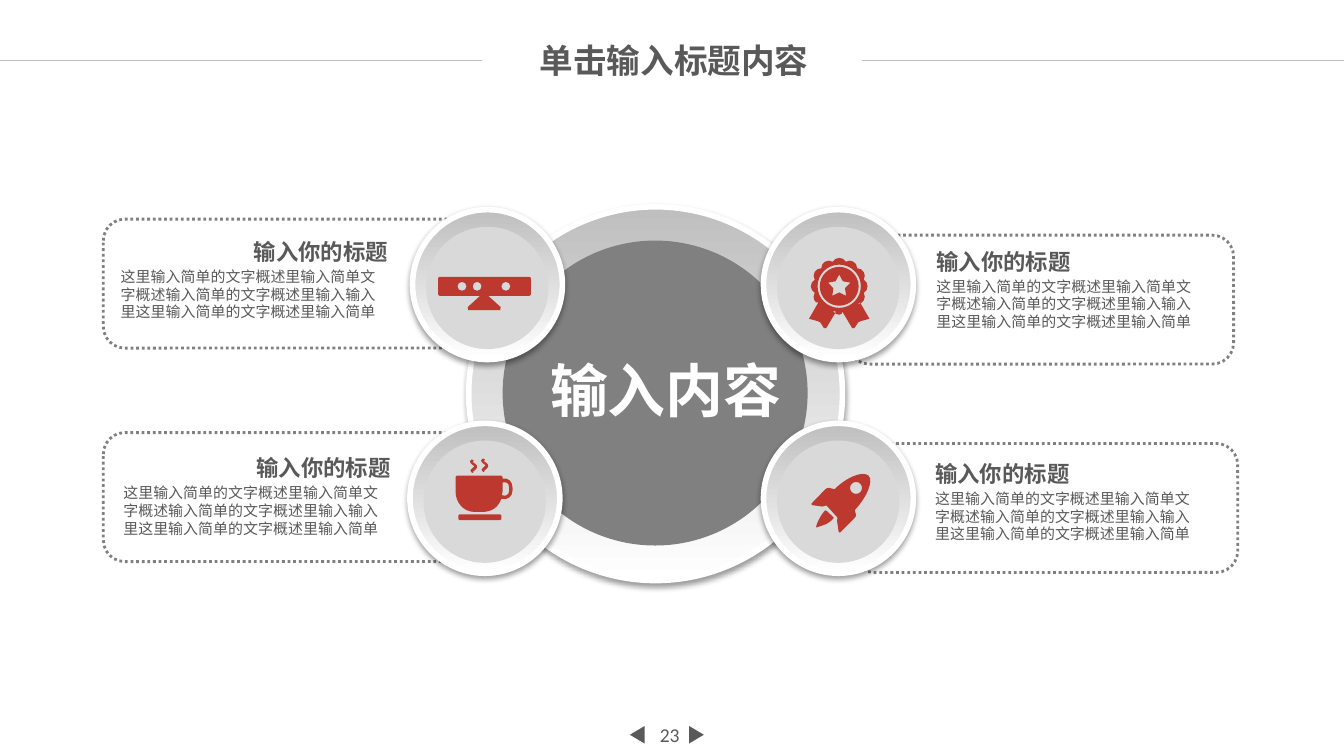
import math

from lxml import etree
from pptx import Presentation
from pptx.dml.color import RGBColor
from pptx.enum.dml import MSO_LINE
from pptx.enum.shapes import MSO_CONNECTOR, MSO_SHAPE
from pptx.enum.text import MSO_ANCHOR, PP_ALIGN
from pptx.oxml.ns import qn
from pptx.util import Pt

WHITE = RGBColor(0xFF, 0xFF, 0xFF)
LIGHT = RGBColor(0xD9, 0xD9, 0xD9)
SILVER = RGBColor(0xBF, 0xBF, 0xBF)
GRAY = RGBColor(0x80, 0x80, 0x80)
DARK = RGBColor(0x59, 0x59, 0x59)
RED = RGBColor(0xBD, 0x39, 0x2F)

OVAL, ROUNDED, TRIANGLE = MSO_SHAPE.OVAL, MSO_SHAPE.ROUNDED_RECTANGLE, MSO_SHAPE.ISOSCELES_TRIANGLE
LEFT, CENTER, RIGHT = PP_ALIGN.LEFT, PP_ALIGN.CENTER, PP_ALIGN.RIGHT
TOP, MIDDLE = MSO_ANCHOR.TOP, MSO_ANCHOR.MIDDLE
CJK = "Noto Sans CJK SC"

HEADING = "输入你的标题"
BODY = "这里输入简单的文字概述里输入简单文字概述输入简单的文字概述里输入输入里这里输入简单的文字概述里输入简单"

# Left and top of each panel, badge and caption, with the heading alignment
ITEMS = [
    ((454.3, 126), (409, 112.3), (494.6, 128.9), LEFT),
    ((456.5, 237.6), (409, 226.8), (493.9, 242.6), LEFT),
    ((55.4, 117.4), (221, 112.3), (57.6, 123.6), RIGHT),
    ((55.4, 231.8), (219.6, 226.8), (59, 239.6), RIGHT),
]


def add_shape(slide, kind, left, top, width, height, fill=None, rotation=0):
    shape = slide.shapes.add_shape(kind, Pt(left), Pt(top), Pt(width), Pt(height))
    shape.shadow.inherit = False
    shape.rotation = rotation
    shape.line.fill.background()
    if fill is None:
        shape.fill.background()
    else:
        shape.fill.solid()
        shape.fill.fore_color.rgb = fill
    return shape


def add_panel(slide, left, top):
    panel = add_shape(slide, ROUNDED, left, top, 206.6, 69.1)
    panel.line.color.rgb = GRAY
    panel.line.width = Pt(1.5)
    panel.line.dash_style = MSO_LINE.ROUND_DOT


def add_raised_circle(slide, left, top, size):
    circle = add_shape(slide, OVAL, left, top, size, size)
    circle.fill.gradient()
    circle.fill.gradient_angle = 90
    for stop, color in zip(circle.fill.gradient_stops, (WHITE, SILVER)):
        stop.color.rgb = color
    circle.line.color.rgb = WHITE
    circle.line.width = Pt(3)
    effects = circle._element.spPr.find(qn("a:effectLst"))
    shadow = etree.SubElement(effects, qn("a:outerShdw"), blurRad=str(Pt(3.1)),
                              dist=str(Pt(1.6)), dir="5400000", algn="t", rotWithShape="0")
    color = etree.SubElement(shadow, qn("a:srgbClr"), val="000000")
    etree.SubElement(color, qn("a:alpha"), val="38000")


def add_text(slide, box, paragraphs, anchor=MIDDLE, inset=(0, 0)):
    text_box = slide.shapes.add_textbox(*[Pt(length) for length in box])
    frame = text_box.text_frame
    frame.word_wrap = True
    frame.vertical_anchor = anchor
    frame.margin_left = frame.margin_right = Pt(inset[0])
    frame.margin_top = frame.margin_bottom = Pt(inset[1])
    for index, (text, style) in enumerate(paragraphs):
        paragraph = frame.paragraphs[0] if index == 0 else frame.add_paragraph()
        format_text(paragraph, text, **style)


def format_text(paragraph, text, size, color=DARK, bold=False, align=CENTER,
                font=CJK, line_height=None, before=0):
    paragraph.alignment = align
    paragraph.space_before = Pt(before)
    if line_height:
        paragraph.line_spacing = Pt(line_height)
    run = paragraph.add_run()
    run.text = text
    run.font.name = font
    run.font.size = Pt(size)
    run.font.bold = bold
    run.font.color.rgb = color
    etree.SubElement(run._r.rPr, qn("a:ea"), typeface=font)


def add_rule(slide, start, end, y):
    rule = slide.shapes.add_connector(MSO_CONNECTOR.STRAIGHT, Pt(start), Pt(y), Pt(end), Pt(y))
    rule.line.color.rgb = SILVER
    rule.line.width = Pt(0.75)
    etree.SubElement(rule._element.spPr, qn("a:effectLst"))


def polar(x, y, radius, degrees):
    """Point at an angle measured clockwise from the top."""
    angle = math.radians(degrees)
    return x + radius * math.sin(angle), y - radius * math.cos(angle)


def ring(x, y, r):
    k = 0.55 * r
    return [(x, y - r), (x + k, y - r, x + r, y - k, x + r, y),
            (x + r, y + k, x + k, y + r, x, y + r), (x - k, y + r, x - r, y + k, x - r, y),
            (x - r, y - k, x - k, y - r, x, y - r)]


def add_icon(slide, *outlines):
    """Draw outlines of nodes: pairs are corners, sixes are Bezier curves."""
    builder = slide.shapes.build_freeform(*[Pt(value) for value in outlines[0][0]])
    for index, outline in enumerate(outlines):
        if index:
            builder.move_to(*[Pt(value) for value in outline[0]])
        points = [node[i:i + 2] for node in outline[1:] for i in range(0, len(node), 2)]
        builder.add_line_segments([(Pt(x), Pt(y)) for x, y in points], close=True)
    icon = builder.convert_to_shape()
    icon.shadow.inherit = False
    icon.fill.solid()
    icon.fill.fore_color.rgb = RED
    icon.line.fill.background()

    # Join the three segments of each curve into one Bezier command
    segments = iter(list(icon._element.iter(qn("a:lnTo"))))
    for outline in outlines:
        for node in outline[1:]:
            first = next(segments)
            if len(node) == 6:
                curve = etree.Element(qn("a:cubicBezTo"))
                first.addprevious(curve)
                for segment in (first, next(segments), next(segments)):
                    curve.append(segment[0])
                    segment.getparent().remove(segment)
        # The builder may repeat the start only through its close command


def add_level(slide):
    bar = [(235.4, 148.3), (283.7, 148.3), (284.4, 149), (284.4, 157.8), (283.7, 158.5),
           (261.6, 158.5), (268.2, 164.5), (268, 166.2), (250.8, 166.2), (250.6, 164.5),
           (257.2, 158.5), (235.4, 158.5), (234.7, 157.8), (234.7, 149)]
    add_icon(slide, bar, *[ring(x, 153.4, 2.4) for x in (247.5, 255.6, 271)])


def add_rocket(slide):
    body = [(457.9, 273.3), (464.4, 266.4, 468, 257.8, 465.4, 254.9),
            (462.2, 252, 453.6, 255.6, 447.1, 262.1), (444.2, 261.4),
            (443.5, 261.2, 442.8, 261.6, 442.1, 262.2), (434.7, 269.8), (434.9, 270.6),
            (440.6, 271.4), (442.8, 270.8), (448.6, 277.2), (448.5, 279.4), (449.3, 285.1),
            (450, 285.3), (457.9, 277.4), (458.5, 276.7, 458.8, 276.3, 458.6, 275.8)]
    flame = [(442.7, 273.6), (441.9, 273.2, 441.9, 273.6, 441.7, 273.8),
             (439.2, 276.5, 436.3, 283, 437.5, 282.6),
             (442.8, 280.8, 443.5, 280.8, 446.4, 277.9), (446.6, 277.2)]
    add_icon(slide, flame)
    add_icon(slide, body, ring(458.6, 261.4, 3.2))


def add_medal(slide):
    x, y = 449.6, 153.4
    left_ribbon = [(447.9, 167), (442.6, 175.9), (441.4, 175.8), (439.4, 172.7),
                   (438, 172.1), (433.4, 170.8), (438.5, 162)]
    right_ribbon = [(2 * x - px, py) for px, py in reversed(left_ribbon)]
    rosette = [polar(x, y, 13.6, 15)]
    for start in range(15, 375, 30):
        if start == 135:
            rosette += right_ribbon
        elif start == 195:
            rosette += left_ribbon
        else:
            rosette.append((*polar(x, y, 16, start + 8), *polar(x, y, 16, start + 22),
                            *polar(x, y, 13.6, start + 30)))
    star = [polar(x, y, r, 36 * k) for k, r in enumerate([6.3, 3.3] * 5)]
    add_icon(slide, rosette, ring(x, y, 11.6))
    add_icon(slide, ring(x, y, 10.4), star)


def add_cup(slide):
    cup = [(244.8, 254.9), (268.6, 254.9), (269.3, 255.6), (269.3, 256.4),
           (272.5, 256, 274.6, 258, 274.6, 261.4), (274.6, 262.8),
           (274.6, 266, 272, 268.2, 268.6, 267.3), (267, 271.8, 263.5, 274.3, 258.5, 274.3),
           (254.2, 274.3), (248.4, 274.3, 244.1, 269.3, 244.1, 263.5), (244.1, 255.4)]
    handle = [(269.3, 258.5), (271.5, 258, 272.8, 259, 272.8, 261.4), (272.8, 262.8),
              (272.8, 265.2, 271, 266.2, 268.8, 265.3), (269.3, 263.5)]
    saucer = [(246.1, 275.6), (268, 275.6), (268.6, 276.2), (268.6, 278), (268, 278.6),
              (246.1, 278.6), (245.5, 278), (245.5, 276.2)]
    steam = [(252.9, 253.4), (251.7, 253, 251.7, 251.8, 253.4, 250.6), (254.2, 249.8),
             (252.5, 248.5, 250.6, 247.5, 252.7, 246.2), (253.8, 246.6), (253.4, 247.7),
             (255.5, 248.8, 256.5, 250.2, 254.6, 251.8), (253.6, 252.6), (253.6, 253.2)]
    shifted = [tuple(value + (-0.5 if i % 2 else 6) for i, value in enumerate(node))
               for node in steam]
    add_icon(slide, cup, handle)
    for outline in (saucer, steam, shifted):
        add_icon(slide, outline)


def main():
    presentation = Presentation()
    presentation.slide_width, presentation.slide_height = Pt(720), Pt(405)
    slide = presentation.slides.add_slide(presentation.slide_layouts[6])

    # Page number between two arrows
    for left, rotation in ((368.4, 90), (336.7, 270)):
        add_shape(slide, TRIANGLE, left, 389.7, 9.4, 7.9, DARK, rotation)
    add_text(slide, (342.9, 383, 31.7, 21.6), [("23", dict(size=10.5, font="Calibri"))])

    # Dotted panels behind the circles
    for panel, _, _, _ in ITEMS:
        add_panel(slide, *panel)

    # Central circle
    add_raised_circle(slide, 251.1, 110.8, 200.2)
    add_shape(slide, OVAL, 269.3, 128.9, 163.4, 163.4, GRAY)
    add_text(slide, (285.3, 188, 142.6, 41),
             [("输入内容", dict(size=31, color=WHITE, bold=True))])

    # Badges and their icons
    for _, (left, top), _, _ in ITEMS:
        add_raised_circle(slide, left, top, 80.3)
        add_shape(slide, OVAL, left + 7.3, top + 9.2, 65.5, 65.5, LIGHT)
    for add_drawing in (add_level, add_rocket, add_medal, add_cup):
        add_drawing(slide)

    # Captions
    for _, _, caption, align in ITEMS:
        add_text(slide, (*caption, 157.4, 56.9), [
            (HEADING, dict(size=12, bold=True, align=align, line_height=14.8)),
            (BODY, dict(size=8, align=LEFT, line_height=9.5, before=1.4)),
        ], anchor=TOP, inset=(7.2, 3.6))

    # Slide title and rules
    add_text(slide, (259.9, 17.8, 202.3, 28.8), [("单击输入标题内容", dict(size=18, bold=True))])
    add_rule(slide, 0, 258.2, 32.4)
    add_rule(slide, 461.9, 720, 32.4)

    presentation.save("out.pptx")


if __name__ == "__main__":
    main()
